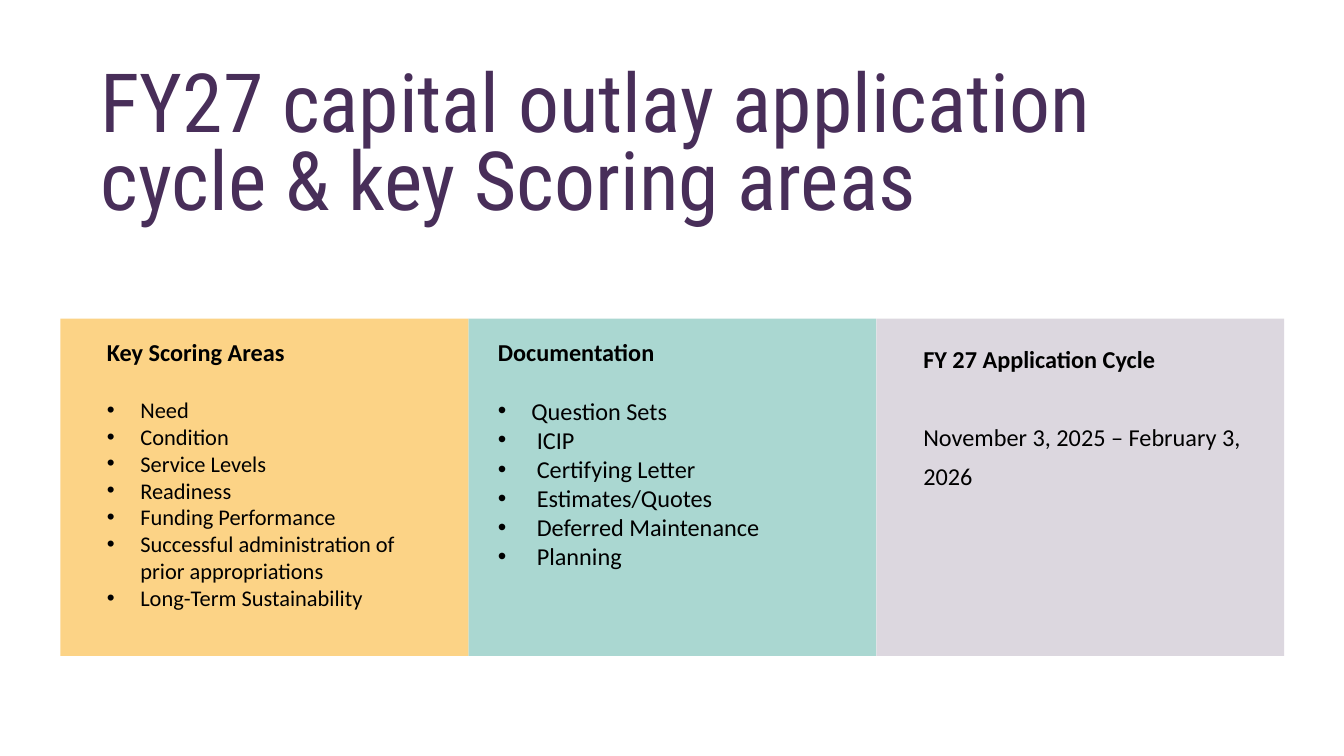
from lxml import etree
from pptx import Presentation
from pptx.dml.color import RGBColor
from pptx.enum.shapes import MSO_SHAPE
from pptx.oxml.ns import qn
from pptx.util import Inches, Pt

RECTANGLE = MSO_SHAPE.RECTANGLE
COLORS = {
    "title": "482E59",
    "text": "000000",
    "scoring": "FCD386",
    "documents": "AAD7D1",
    "cycle": "482E58",
}
PANEL_LEFT, PANEL_TOP = 0.9, 4.74
PANEL_WIDTH, PANEL_HEIGHT = 6.07, 5.02
TEXT_TOP = 4.97
HEADING_SIZE = 26
BLANK_LINE = 31.7
SCORING_AREAS = [
    "Need",
    "Condition",
    "Service Levels",
    "Readiness",
    "Funding Performance",
    "Successful administration of prior appropriations",
    "Long-Term Sustainability",
]
DOCUMENTS = [
    "Question Sets",
    "ICIP",
    "Certifying Letter",
    "Estimates/Quotes",
    "Deferred Maintenance",
    "Planning",
]


def add_panel(page, column, color, opacity=100):
    left = PANEL_LEFT + column * PANEL_WIDTH
    panel = page.shapes.add_shape(
        RECTANGLE, Inches(left), Inches(PANEL_TOP), Inches(PANEL_WIDTH), Inches(PANEL_HEIGHT)
    )
    panel.shadow.inherit = False
    panel.line.fill.background()
    panel.fill.solid()
    panel.fill.fore_color.rgb = RGBColor.from_string(COLORS[color])
    if opacity < 100:
        fill_color = panel.fill._xPr.find(qn("a:solidFill"))[0]
        etree.SubElement(fill_color, qn("a:alpha"), val=str(opacity * 1000))


def add_text_box(page, left, top, width, height, inset=True):
    box = page.shapes.add_textbox(Inches(left), Inches(top), Inches(width), Inches(height))
    frame = box.text_frame
    frame.word_wrap = True
    if not inset:
        frame.margin_left = frame.margin_right = 0
        frame.margin_top = frame.margin_bottom = 0
    return frame


def add_span(para, text, size, font="Calibri", color="text", bold=False):
    span = para.add_run()
    span.text = text
    span.font.name = font
    span.font.size = Pt(size)
    span.font.bold = bold
    span.font.color.rgb = RGBColor.from_string(COLORS[color])


def add_bullet(para, indent):
    properties = para._p.get_or_add_pPr()
    properties.set("marL", str(Inches(indent)))
    properties.set("indent", str(-Inches(indent)))
    etree.SubElement(properties, qn("a:buFont"), typeface="Arial")
    etree.SubElement(properties, qn("a:buChar"), char="•")


def add_list(page, left, width, height, heading, items, size, later_indent):
    frame = add_text_box(page, left, TEXT_TOP, width, height)
    add_span(frame.paragraphs[0], heading, HEADING_SIZE, bold=True)
    for index, item in enumerate(items):
        para = frame.add_paragraph()
        add_bullet(para, later_indent if index else 0.5)
        if index == 0:
            para.space_before = Pt(BLANK_LINE)
        add_span(para, item, size)


def add_title(page):
    para = add_text_box(page, 1.5, 1.06, 17.3, 2.33, inset=False).paragraphs[0]
    para.line_spacing = Pt(83.3)
    title = "FY27 capital outlay application cycle & key Scoring areas"
    add_span(para, title, 87.5, "Roboto Condensed", "title")


def add_cycle(page):
    frame = add_text_box(page, 13.74, TEXT_TOP, 5.06, 2.32, inset=False)
    heading, dates = frame.paragraphs[0], frame.add_paragraph()
    heading.line_spacing = dates.line_spacing = Pt(42)
    dates.space_before = Pt(42)
    add_span(heading, "FY 27 Application Cycle", HEADING_SIZE, bold=True)
    add_span(dates, "November 3, 2025 – February 3, 2026", HEADING_SIZE)


def main():
    deck = Presentation()
    deck.slide_width, deck.slide_height = Inches(20), Inches(11.25)
    page = deck.slides.add_slide(deck.slide_layouts[6])
    add_panel(page, 2, "cycle", opacity=19)
    add_panel(page, 1, "documents")
    add_panel(page, 0, "scoring")
    add_title(page)
    add_list(page, 1.49, 5.02, 4.61, "Key Scoring Areas", SCORING_AREAS, 24, 0.5)
    add_list(page, 7.31, 5.67, 3.6, "Documentation", DOCUMENTS, 26, 0.58)
    add_cycle(page)
    deck.save("out.pptx")


if __name__ == "__main__":
    main()
